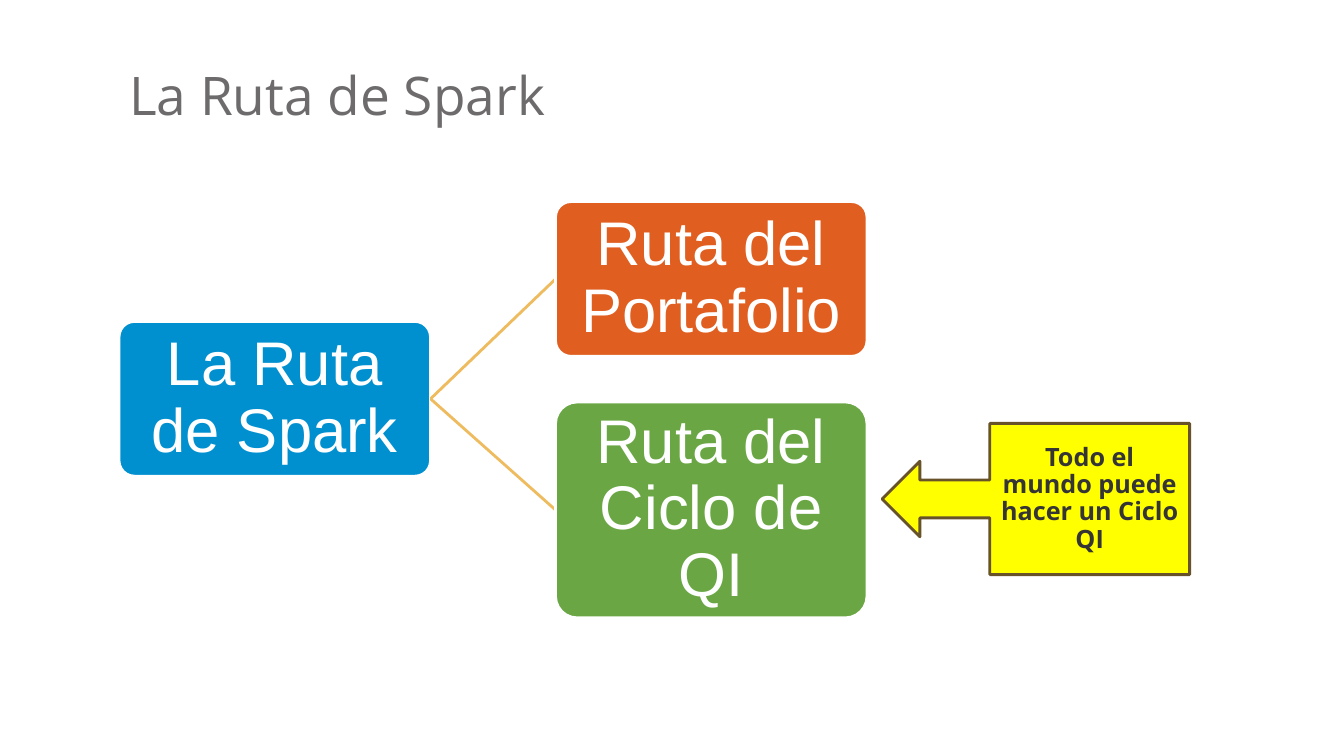
"""Build the slide "La Ruta de Spark": one route splitting into two, with a callout."""
from dataclasses import dataclass

from lxml.etree import SubElement
from pptx import Presentation
from pptx.dml.color import RGBColor as RGB
from pptx.enum.shapes import MSO_CONNECTOR as LINE, MSO_SHAPE as SHAPE
from pptx.enum.text import MSO_ANCHOR as ANCHOR, MSO_AUTO_SIZE as FIT, PP_ALIGN as ALIGN
from pptx.oxml.ns import qn
from pptx.util import Cm, Pt


@dataclass(frozen=True)
class Theme:
    heading: RGB = RGB.from_string("6D6B6B")
    root: RGB = RGB.from_string("0090D0")
    portfolio: RGB = RGB.from_string("E05E1F")
    cycle: RGB = RGB.from_string("6AA744")
    branch: RGB = RGB.from_string("EEBC5F")
    white: RGB = RGB.from_string("FFFFFF")
    callout: RGB = RGB.from_string("FFFF00")
    callout_edge: RGB = RGB.from_string("68522A")
    callout_text: RGB = RGB.from_string("363535")
    heading_size: Pt = Pt(38)
    route_size: Pt = Pt(44)
    callout_size: Pt = Pt(18)
    stroke: Pt = Pt(2)


def write(shape, text, font_name, size, color, align, bold=False):
    shape.text_frame.text = text
    paragraph = shape.text_frame.paragraphs[0]
    paragraph.alignment = align
    font = paragraph.font
    font.name, font.size, font.bold = font_name, size, bold
    font.color.rgb = color
    return paragraph


def add_box(kind, left, top, width, height, fill, edge):
    box = slide.shapes.add_shape(kind, Cm(left), Cm(top), Cm(width), Cm(height))
    box.shadow.inherit = False
    box.fill.solid()
    box.fill.fore_color.rgb = fill
    box.line.color.rgb = edge
    box.line.width = theme.stroke
    box.text_frame.word_wrap = True
    box.text_frame.vertical_anchor = ANCHOR.MIDDLE
    return box


theme = Theme()
deck = Presentation()
deck.slide_width, deck.slide_height = Cm(33.87), Cm(19.05)
slide = deck.slides.add_slide(deck.slide_layouts[5])

heading = slide.shapes.title
heading.left, heading.top, heading.width, heading.height = Cm(3), Cm(0.81), Cm(16.74), Cm(2.49)
heading.text_frame.auto_size = FIT.NONE
heading.text_frame.vertical_anchor = ANCHOR.BOTTOM
write(heading, "La Ruta de Spark", "Open Sans", theme.heading_size, theme.heading, ALIGN.LEFT)

route_width, root_left, branch_left = 7.85, 3, 14
root_middle = 10.05
routes = [
    ("La Ruta de Spark", root_left, root_middle, 3.9, theme.root),
    ("Ruta del Portafolio", branch_left, 7.03, 3.9, theme.portfolio),
    ("Ruta del Ciclo de QI", branch_left, 12.85, 5.44, theme.cycle),
]

for text, left, middle, height, fill in routes:
    if left == branch_left:
        branch = slide.shapes.add_connector(
            LINE.STRAIGHT, Cm(root_left + route_width), Cm(root_middle), Cm(left), Cm(middle))
        branch.line.color.rgb = theme.branch
        branch.line.width = theme.stroke
        SubElement(branch.element.spPr, qn("a:effectLst"))
    route = add_box(SHAPE.ROUNDED_RECTANGLE, left, middle - height / 2,
                    route_width, height, fill, theme.white)
    route.adjustments[0] = 0.1
    frame = route.text_frame
    frame.margin_left = frame.margin_right = frame.margin_top = frame.margin_bottom = Cm(0.08)
    label = write(route, text, "Arial", theme.route_size, theme.white, ALIGN.CENTER)
    label.line_spacing = 0.9

callout = add_box(SHAPE.LEFT_ARROW_CALLOUT, 22.23, 10.67, 7.75, 3.81,
                  theme.callout, theme.callout_edge)
invitation = write(callout, "Todo el mundo puede hacer un Ciclo QI", "Open Sans",
                   theme.callout_size, theme.callout_text, ALIGN.CENTER, bold=True)
invitation.line_spacing = 0.9

deck.save("out.pptx")
